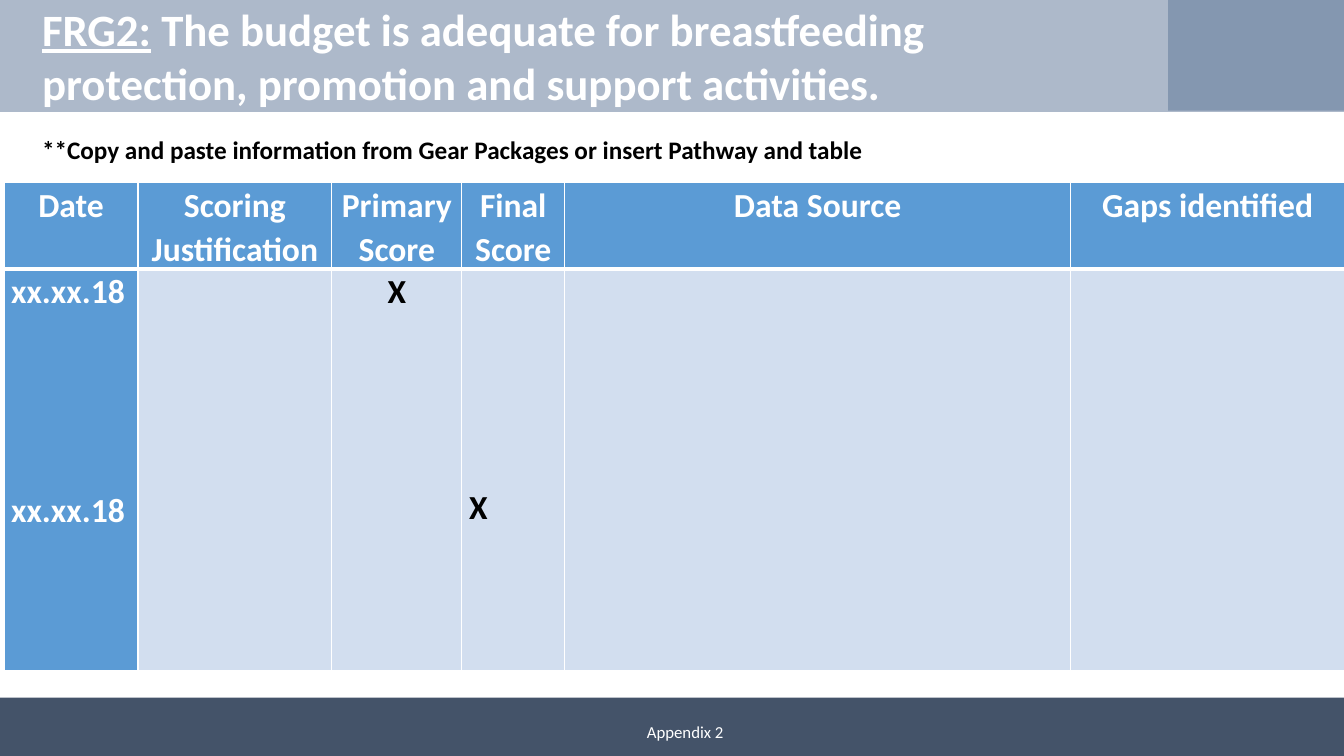
from typing import NamedTuple

from lxml.etree import SubElement
from pptx import Presentation
from pptx.dml.color import RGBColor
from pptx.enum.shapes import MSO_SHAPE
from pptx.enum.text import MSO_ANCHOR, PP_ALIGN
from pptx.oxml.ns import qn
from pptx.util import Cm, Pt

WHITE = RGBColor(0xFF, 0xFF, 0xFF)
BLACK = RGBColor(0x00, 0x00, 0x00)
MIST = RGBColor(0xAD, 0xB9, 0xCA)
STEEL = RGBColor(0x84, 0x97, 0xB0)
NAVY = RGBColor(0x44, 0x53, 0x69)
BLUE = RGBColor(0x5B, 0x9B, 0xD5)
PALE = RGBColor(0xD2, 0xDE, 0xEF)


class Band(NamedTuple):
    left: float
    top: float
    width: float
    height: float
    color: RGBColor


class Column(NamedTuple):
    width: float
    head: str
    anchor: MSO_ANCHOR = MSO_ANCHOR.TOP
    body: tuple[str, ...] = ()
    align: PP_ALIGN = PP_ALIGN.LEFT
    inset: float = 0  # space above the body text
    ink: RGBColor = BLACK
    fill: RGBColor = PALE


BANDS = [
    Band(0, 0, 33.87, 2.82, MIST),
    Band(0, 17.58, 33.87, 1.7, NAVY),
    Band(29.44, -0.03, 4.43, 2.82, STEEL),
]
MID = MSO_ANCHOR.MIDDLE
COLUMNS = [
    Column(3.38, "Date", body=("xx.xx.18", "xx.xx.18"), ink=WHITE, fill=BLUE),
    Column(4.88, "Scoring Justification"),
    Column(3.28, "Primary Score", MID, ("X",), PP_ALIGN.CENTER),
    Column(2.59, "Final Score", MID, ("X",), inset=5.43),
    Column(12.75, "Data Source"),
    Column(6.91, "Gaps identified"),
]
ROWS = (2.13, 10.13)
GAP = 125  # points between the two dates


def write(frame, *lines: str, size: float, color: RGBColor = WHITE,
          bold: bool = True, align: PP_ALIGN = PP_ALIGN.LEFT,
          anchor: MSO_ANCHOR = MSO_ANCHOR.TOP, space: float = 1,
          gap: float = 0, lead: str = "") -> None:
    """Fill a frame; lead is an underlined start of the first line."""
    frame.word_wrap = True
    frame.vertical_anchor = anchor
    for i, line in enumerate(lines):
        para = frame.add_paragraph() if i else frame.paragraphs[0]
        para.alignment = align
        para.line_spacing = space
        if i:
            para.space_before = Pt(gap)
        parts = [(lead, True), (line, False)] if lead and not i else [(line, False)]
        for text, under in parts:
            run = para.add_run()
            run.text = text
            font = run.font
            font.name, font.size, font.bold = "Calibri", Pt(size), bold
            font.underline = under
            font.color.rgb = color


def edge(cell, top: float, bottom: float) -> None:
    """Draw white cell borders, widths in points."""
    props = cell._tc.get_or_add_tcPr()
    for side, width in (("L", 1), ("R", 1), ("T", top), ("B", bottom)):
        line = SubElement(props, qn(f"a:ln{side}"), w=str(Pt(width)))
        SubElement(SubElement(line, qn("a:solidFill")), qn("a:srgbClr"), val=str(WHITE))


def paint(cell, fill: RGBColor, top: float, bottom: float, inset: float = 0) -> None:
    edge(cell, top, bottom)
    cell.fill.solid()
    cell.fill.fore_color.rgb = fill
    cell.margin_left = cell.margin_right = Cm(0.18)
    cell.margin_top, cell.margin_bottom = Cm(inset), 0


def block(slide, band: Band) -> None:
    shape = slide.shapes.add_shape(
        MSO_SHAPE.RECTANGLE, *map(Cm, band[:4]))
    shape.shadow.inherit = False
    shape.fill.solid()
    shape.fill.fore_color.rgb = band.color
    shape.line.fill.background()


def label(slide, left: float, top: float, width: float, height: float,
          text: str, **style) -> None:
    box = slide.shapes.add_textbox(*map(Cm, (left, top, width, height)))
    write(box.text_frame, text, **style)


def grid(slide) -> None:
    total = sum(col.width for col in COLUMNS)
    table = slide.shapes.add_table(
        len(ROWS), len(COLUMNS), Cm(0.1), Cm(4.6), Cm(total), Cm(sum(ROWS))).table
    for row, height in zip(table.rows, ROWS):
        row.height = Cm(height)
    for i, col in enumerate(COLUMNS):
        table.columns[i].width = Cm(col.width)
        head, body = table.cell(0, i), table.cell(1, i)
        paint(head, BLUE, 1, 3)
        write(head.text_frame, col.head, size=24, align=PP_ALIGN.CENTER, space=1.07)
        head.vertical_anchor = col.anchor
        paint(body, col.fill, 3, 1, col.inset)
        write(body.text_frame, *col.body, size=24, color=col.ink,
              align=col.align, space=1.07, gap=GAP)


def main() -> None:
    deck = Presentation()
    deck.slide_width, deck.slide_height = Cm(33.87), Cm(19.05)
    slide = deck.slides.add_slide(deck.slide_layouts[6])

    # Background bands
    for band in BANDS:
        block(slide, band)

    # Footer
    label(slide, 6.07, 17.93, 22.4, 1.02, "Appendix 2", size=12, bold=False,
          align=PP_ALIGN.CENTER, anchor=MID)

    # Score table
    grid(slide)

    # Note and title
    label(slide, 0.81, 3.2, 28.52, 1.09,
          "**Copy and paste information from Gear Packages or insert Pathway and table",
          size=18, color=BLACK, space=1.07)
    label(slide, 0.81, 0.38, 28.02, 2.03,
          " The budget is adequate for breastfeeding protection, "
          "promotion and support activities.",
          size=32, anchor=MID, lead="FRG2:")

    deck.save("out.pptx")


if __name__ == "__main__":
    main()
